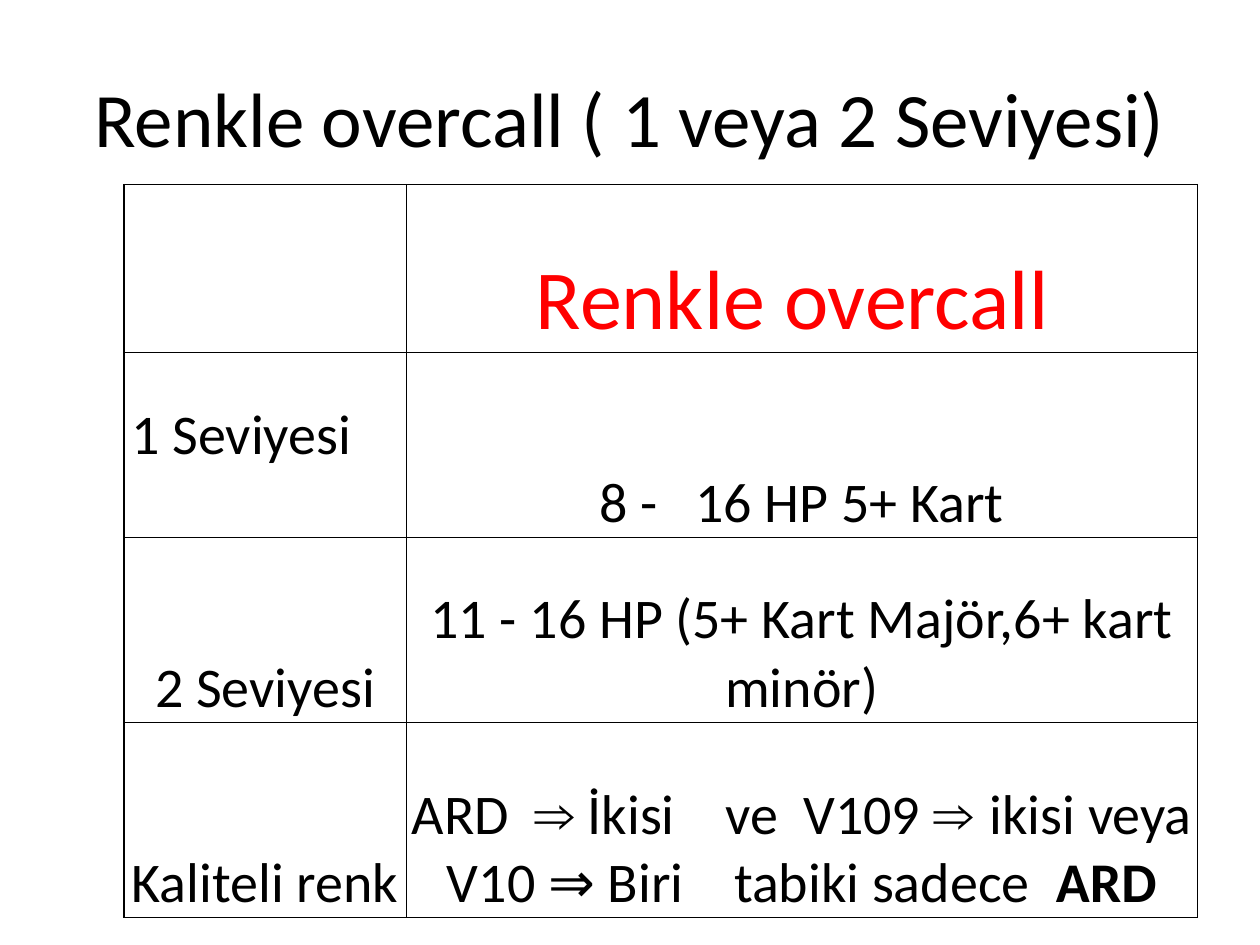
from lxml import etree
from pptx import Presentation
from pptx.dml.color import RGBColor
from pptx.enum.text import MSO_ANCHOR, PP_ALIGN
from pptx.oxml.ns import qn
from pptx.util import Cm, Pt

CENTER, LEFT = PP_ALIGN.CENTER, PP_ALIGN.LEFT
MIDDLE, BOTTOM = MSO_ANCHOR.MIDDLE, MSO_ANCHOR.BOTTOM
COLORS = {"text": "000000", "heading": "FF0000", "border": "000000"}
FONT, ARROW_FONT = "Calibri", "Arial"
COLS = [5.69, 15.95]
ROWS = [3.38, 3.73, 3.73, 3.94]
LINE_HEIGHT = 1.37
QUALITY = [
    ("ARD  ", FONT, False),
    ("⇒", ARROW_FONT, False),
    (" İkisi    ve  V109 ", FONT, False),
    ("⇒ ", ARROW_FONT, False),
    ("ikisi veya V10 ⇒ Biri    tabiki sadece  ", FONT, False),
    ("ARD", FONT, True),
]
CELLS = [
    ["", "Renkle overcall "],
    ["1 Seviyesi", "8 -   16 HP 5+ Kart"],
    ["2 Seviyesi", "11 - 16 HP (5+ Kart Majör,6+ kart minör)"],
    ["Kaliteli renk", QUALITY],
]


def style(p, size, color, align=CENTER):
    """Set the alignment and font of a paragraph."""
    p.alignment = align
    p.font.size = Pt(size)
    p.font.name = FONT
    p.font.color.rgb = RGBColor.from_string(COLORS[color])


def set_borders(cell, widths):
    """Draw the four cell borders with widths in points."""
    tcPr = cell._tc.get_or_add_tcPr()
    for side, width in widths.items():
        ln = etree.SubElement(tcPr, qn(f"a:{side}"), w=str(Pt(width)))
        fill = etree.SubElement(ln, qn("a:solidFill"))
        etree.SubElement(fill, qn("a:srgbClr"), val=COLORS["border"])


def fill_cell(cell, content):
    """Write a string or a list of (text, font, bold) runs into a cell."""
    cell.vertical_anchor = BOTTOM
    cell.margin_left = cell.margin_right = cell.margin_top = Cm(0.03)
    cell.margin_bottom = 0
    p = cell.text_frame.paragraphs[0]
    if isinstance(content, str):
        p.text = content
        return p
    for text, font, bold in content:
        r = p.add_run()
        r.text = text
        r.font.name = font
        r.font.bold = bold
    return p


def add_title(slide, left, top, width, height):
    """Place the centred slide title."""
    s = slide.shapes.add_textbox(Cm(left), Cm(top), Cm(width), Cm(height))
    tf = s.text_frame
    tf.word_wrap = True
    tf.vertical_anchor = MIDDLE
    p = tf.paragraphs[0]
    p.text = "Renkle overcall ( 1 veya 2 Seviyesi)"
    style(p, 44, "text")


def add_overcall_table(slide, left, top):
    """Place the bordered table of overcall requirements."""
    s = slide.shapes.add_table(len(ROWS), len(COLS), Cm(left), Cm(top),
                               Cm(sum(COLS)), Cm(sum(ROWS)))
    table = s.table
    table.first_row = table.horz_banding = False
    for col, width in zip(table.columns, COLS):
        col.width = Cm(width)
    for row, height in zip(table.rows, ROWS):
        row.height = Cm(height)
    for i, row in enumerate(CELLS):
        for j, content in enumerate(row):
            cell = table.cell(i, j)
            p = fill_cell(cell, content)
            heading = i == 0
            style(p, 48 if heading else 32, "heading" if heading else "text")
            set_borders(cell, {
                "lnL": 1 if j == 0 else 0.5,
                "lnR": 1 if j == len(COLS) - 1 else 0.5,
                "lnT": 1 if i == 0 else 0.5,
                "lnB": 1 if i == len(ROWS) - 1 else 0.5,
            })
            cell.fill.background()
    level_one = table.cell(1, 0)
    level_one.text_frame.paragraphs[0].alignment = LEFT
    level_one.margin_left = Cm(0.15)
    level_one.margin_bottom = Cm(LINE_HEIGHT)


def main():
    """Build and save the slide."""
    prs = Presentation()
    prs.slide_width, prs.slide_height = Cm(25.4), Cm(19.05)
    slide = prs.slides.add_slide(prs.slide_layouts[6])
    add_title(slide, 1.27, 0.76, 22.86, 3.18)
    add_overcall_table(slide, 2.5, 3.72)
    prs.save("out.pptx")


if __name__ == "__main__":
    main()
